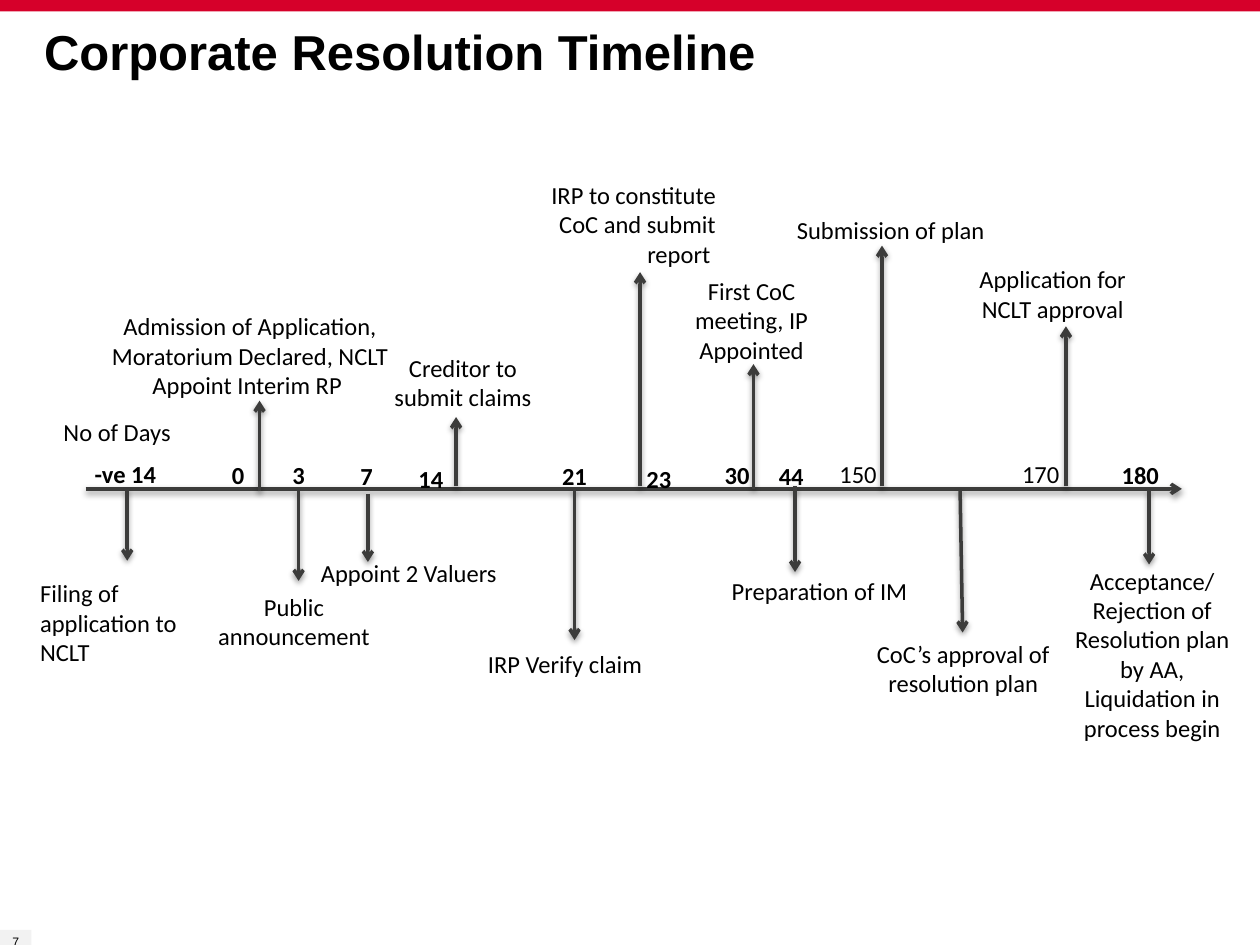
from lxml import etree
from pptx import Presentation
from pptx.dml.color import RGBColor
from pptx.enum import shapes, text
from pptx.oxml import parse_xml
from pptx.util import Inches, Pt

RED = RGBColor(0xD6, 0x00, 0x2A)
LIGHT_GRAY = RGBColor(0xF2, 0xF2, 0xF2)
DARK_GRAY = RGBColor(0x3C, 0x3C, 0x3B)
BLACK = RGBColor(0, 0, 0)
LEFT, CENTER, RIGHT = text.PP_ALIGN.LEFT, text.PP_ALIGN.CENTER, text.PP_ALIGN.RIGHT
DRAWING = "http://schemas.openxmlformats.org/drawingml/2006/main"
SHADOW = (
    f'<a:effectLst xmlns:a="{DRAWING}">'
    '<a:outerShdw blurRad="40000" dist="20000" dir="5400000" rotWithShape="0">'
    '<a:srgbClr val="000000"><a:alpha val="38000"/></a:srgbClr>'
    "</a:outerShdw></a:effectLst>"
)


def write(shape, content, size=14, font="Calibri", bold=False, align=CENTER,
          wrap=True, inset=True, spacing=None, anchor=text.MSO_ANCHOR.TOP):
    frame = shape.text_frame
    frame.word_wrap = wrap
    frame.vertical_anchor = anchor
    if not inset:
        frame.margin_left = frame.margin_right = 0
        frame.margin_top = frame.margin_bottom = 0
    frame.text = content
    for paragraph in frame.paragraphs:
        paragraph.alignment = align
        paragraph.line_spacing = spacing
        for run in paragraph.runs:
            run.font.size = Pt(size)
            run.font.name = font
            run.font.bold = bold
            run.font.color.rgb = BLACK


presentation = Presentation()
presentation.slide_width = Inches(10)
presentation.slide_height = Inches(7.5)
slide = presentation.slides.add_slide(presentation.slide_layouts[6])

panels = []
for left, top, width, height, color in [
    (0, 0, 10, 0.09, RED),
    (0, 7.38, 0.25, 0.18, LIGHT_GRAY),
]:
    panel = slide.shapes.add_shape(
        shapes.MSO_SHAPE.RECTANGLE, Inches(left), Inches(top), Inches(width), Inches(height))
    panel.shadow.inherit = False
    panel.fill.solid()
    panel.fill.fore_color.rgb = color
    panel.line.fill.background()
    panels.append(panel)
write(panels[1], "7", size=7, font="Arial", inset=False, anchor=text.MSO_ANCHOR.MIDDLE)

title = slide.shapes.add_textbox(Inches(0.35), Inches(0.24), Inches(8.88), Inches(0.87))
write(title, "Corporate Resolution Timeline", size=28, font="Arial", bold=True,
      align=LEFT, inset=False, spacing=0.85)

arrows = [(0.68, 3.88, 9.38, 3.88), (7.62, 3.89, 7.64, 5.02)]
arrows += [(x, start, x, end) for x, start, end in [
    (1.01, 3.88, 4.45),
    (2.06, 3.9, 3.18),
    (2.37, 3.9, 4.61),
    (2.92, 3.92, 4.46),
    (3.62, 3.86, 3.31),
    (4.56, 3.88, 5.08),
    (5.08, 3.86, 2.16),
    (5.98, 3.88, 2.89),
    (6.31, 3.86, 4.54),
    (7, 3.86, 1.95),
    (8.46, 3.86, 2.59),
    (9.12, 3.89, 4.48),
]]
for ends in arrows:
    arrow = slide.shapes.add_connector(
        shapes.MSO_CONNECTOR.STRAIGHT, *[Inches(value) for value in ends])
    arrow.line.color.rgb = DARK_GRAY
    arrow.line.width = Pt(2)
    etree.SubElement(arrow.line._get_or_add_ln(), f"{{{DRAWING}}}tailEnd", type="arrow")
    arrow._element.spPr.append(parse_xml(SHADOW))

days = [
    ("-ve 14", 0.65, 3.59, 0.69, True),
    ("0", 1.74, 3.6, 0.3, True),
    ("3", 2.22, 3.6, 0.3, True),
    ("7", 2.76, 3.61, 0.3, True),
    ("14", 3.22, 3.63, 0.4, True),
    ("21", 4.36, 3.61, 0.4, True),
    ("23", 5.03, 3.63, 0.4, True),
    ("30", 5.65, 3.6, 0.4, True),
    ("44", 6.08, 3.61, 0.4, True),
    ("150", 6.56, 3.59, 0.5, False),
    ("170", 8.01, 3.59, 0.5, False),
    ("180", 8.8, 3.6, 0.5, True),
    ("No of Days", 0.4, 3.26, 1.06, False),
]
for day, left, top, width, bold in days:
    label = slide.shapes.add_textbox(Inches(left), Inches(top), Inches(width), Inches(0.34))
    write(label, day, bold=bold, wrap=False)

events = [
    ("Filing of application to NCLT", 0.22, 4.54, 1.53, 0.81, LEFT),
    ("Admission of Application, Moratorium Declared, NCLT Appoint Interim RP ",
     0.75, 2.42, 2.47, 0.81, CENTER),
    ("Public \nannouncement ", 1.51, 4.65, 1.69, 0.57, CENTER),
    ("Appoint 2 Valuers", 2.01, 4.38, 2.47, 0.34, CENTER),
    ("Creditor to submit claims", 2.91, 2.75, 1.53, 0.57, CENTER),
    ("IRP Verify claim", 3.25, 5.1, 2.47, 0.34, CENTER),
    ("IRP to constitute CoC and submit report ", 4.09, 1.38, 1.69, 0.81, RIGHT),
    ("First CoC meeting, IP Appointed", 5.31, 2.14, 1.31, 0.81, CENTER),
    ("Preparation of IM", 5.7, 4.52, 1.61, 0.34, CENTER),
    ("Submission of plan", 6.22, 1.66, 1.7, 0.34, CENTER),
    ("CoC’s approval of resolution plan", 6.65, 5.02, 1.99, 0.57, CENTER),
    ("Application for NCLT approval", 7.56, 2.05, 1.59, 0.57, CENTER),
    ("Acceptance/ Rejection of Resolution plan by AA, Liquidation in process begin",
     8.4, 4.44, 1.49, 1.51, CENTER),
]
for event, left, top, width, height, align in events:
    caption = slide.shapes.add_textbox(
        Inches(left), Inches(top), Inches(width), Inches(height))
    write(caption, event, align=align, wrap=height > 0.34)

presentation.save("out.pptx")
